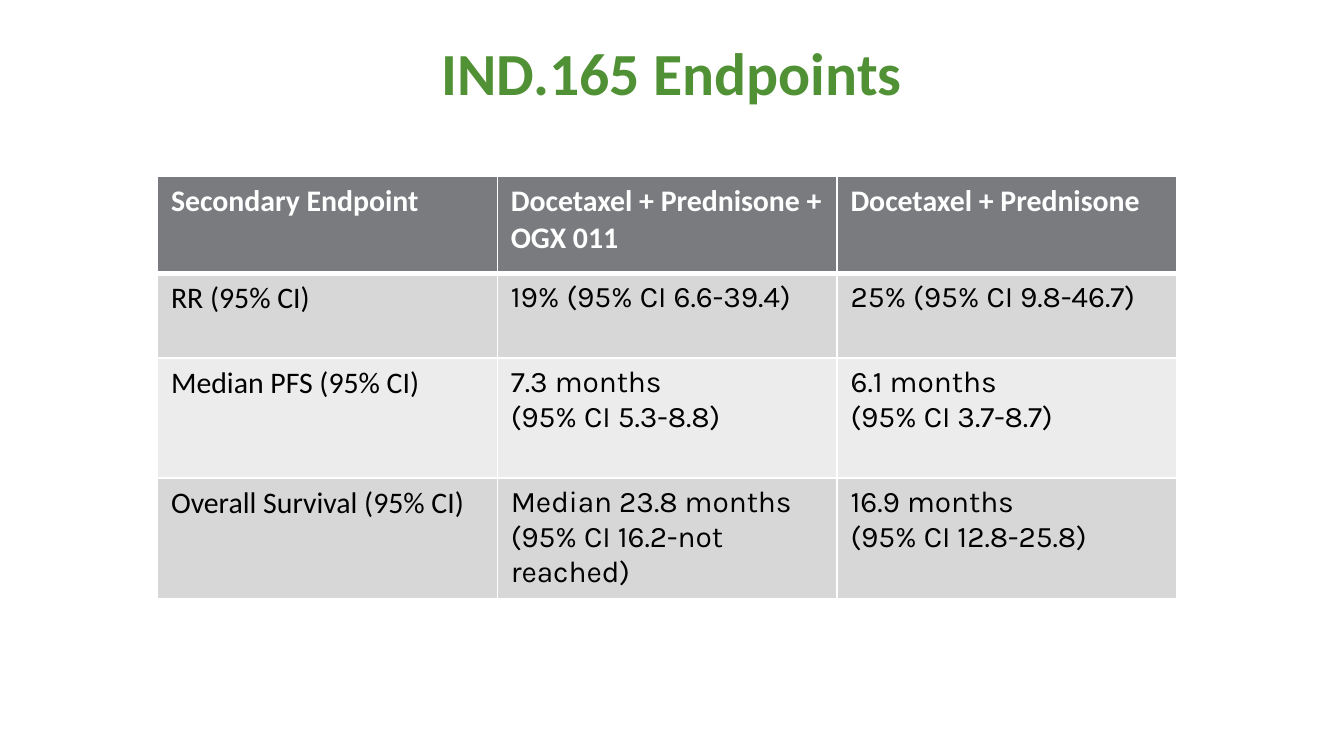
"""Build the IND.165 secondary endpoints slide."""
from lxml import etree
from pptx import Presentation
from pptx.dml.color import RGBColor
from pptx.enum.text import MSO_ANCHOR, PP_ALIGN
from pptx.oxml.ns import qn
from pptx.util import Cm, Pt

MIDDLE, TOP = MSO_ANCHOR.MIDDLE, MSO_ANCHOR.TOP
CENTER, LEFT = PP_ALIGN.CENTER, PP_ALIGN.LEFT
COLORS = {
    "title": "519136",
    "header": "797B7E",
    "odd_row": "D7D7D8",
    "even_row": "ECECEC",
    "white": "FFFFFF",
    "text": "000000",
}
ENDPOINTS = [
    ["Secondary Endpoint", "Docetaxel + Prednisone + OGX 011", "Docetaxel + Prednisone"],
    ["RR (95% CI)", "19% (95% CI 6.6-39.4)", "25% (95% CI 9.8-46.7)"],
    ["Median PFS (95% CI)", "7.3 months\n(95% CI 5.3-8.8)", "6.1 months\n(95% CI 3.7-8.7)"],
    ["Overall Survival (95% CI)", "Median 23.8 months\n(95% CI 16.2-not reached)",
     "16.9 months\n(95% CI 12.8-25.8)"],
]
ROW_HEIGHTS = [1.83, 1.6, 2.27, 2.27]
COLUMN_WIDTH = 6.42


def write(frame, text, *, size=16, font="Calibri", color="text", bold=False, align=LEFT):
    frame.text = text
    for paragraph in frame.paragraphs:
        paragraph.alignment = align
        for run in paragraph.runs:
            run.font.size = Pt(size)
            run.font.name = font
            run.font.bold = bold
            run.font.color.rgb = RGBColor.from_string(COLORS[color])


def add_border(cell, side, width):
    line = etree.SubElement(cell._tc.get_or_add_tcPr(), qn(f"a:{side}"), w=str(Pt(width)))
    fill = etree.SubElement(line, qn("a:solidFill"))
    etree.SubElement(fill, qn("a:srgbClr"), val=COLORS["white"])


prs = Presentation()
prs.slide_width, prs.slide_height = Cm(25.4), Cm(14.29)
slide = prs.slides.add_slide(prs.slide_layouts[5])

title = slide.shapes.title
title.left, title.top, title.width, title.height = Cm(4.37), Cm(0.48), Cm(16.66), Cm(1.75)
title.text_frame.vertical_anchor = MIDDLE
write(title.text_frame, "IND.165 Endpoints", size=32, color="title", bold=True, align=CENTER)

endpoints = slide.shapes.add_table(
    len(ENDPOINTS), len(ENDPOINTS[0]), Cm(2.98), Cm(3.34),
    Cm(COLUMN_WIDTH * len(ENDPOINTS[0])), Cm(sum(ROW_HEIGHTS))).table
for column in endpoints.columns:
    column.width = Cm(COLUMN_WIDTH)

for r, (values, height) in enumerate(zip(ENDPOINTS, ROW_HEIGHTS)):
    endpoints.rows[r].height = Cm(height)
    header = r == 0
    row_color = "header" if header else "odd_row" if r % 2 else "even_row"
    borders = {"lnL": 1, "lnR": 1, "lnT": 3 if r == 1 else 1, "lnB": 3 if header else 1}
    for c, value in enumerate(values):
        cell = endpoints.cell(r, c)
        cell.vertical_anchor = TOP
        for side, width in borders.items():
            add_border(cell, side, width)
        cell.fill.solid()
        cell.fill.fore_color.rgb = RGBColor.from_string(COLORS[row_color])
        write(cell.text_frame, value, bold=header,
              font="Calibri" if header or c == 0 else "Karla",
              color="white" if header else "text")

prs.save("out.pptx")
